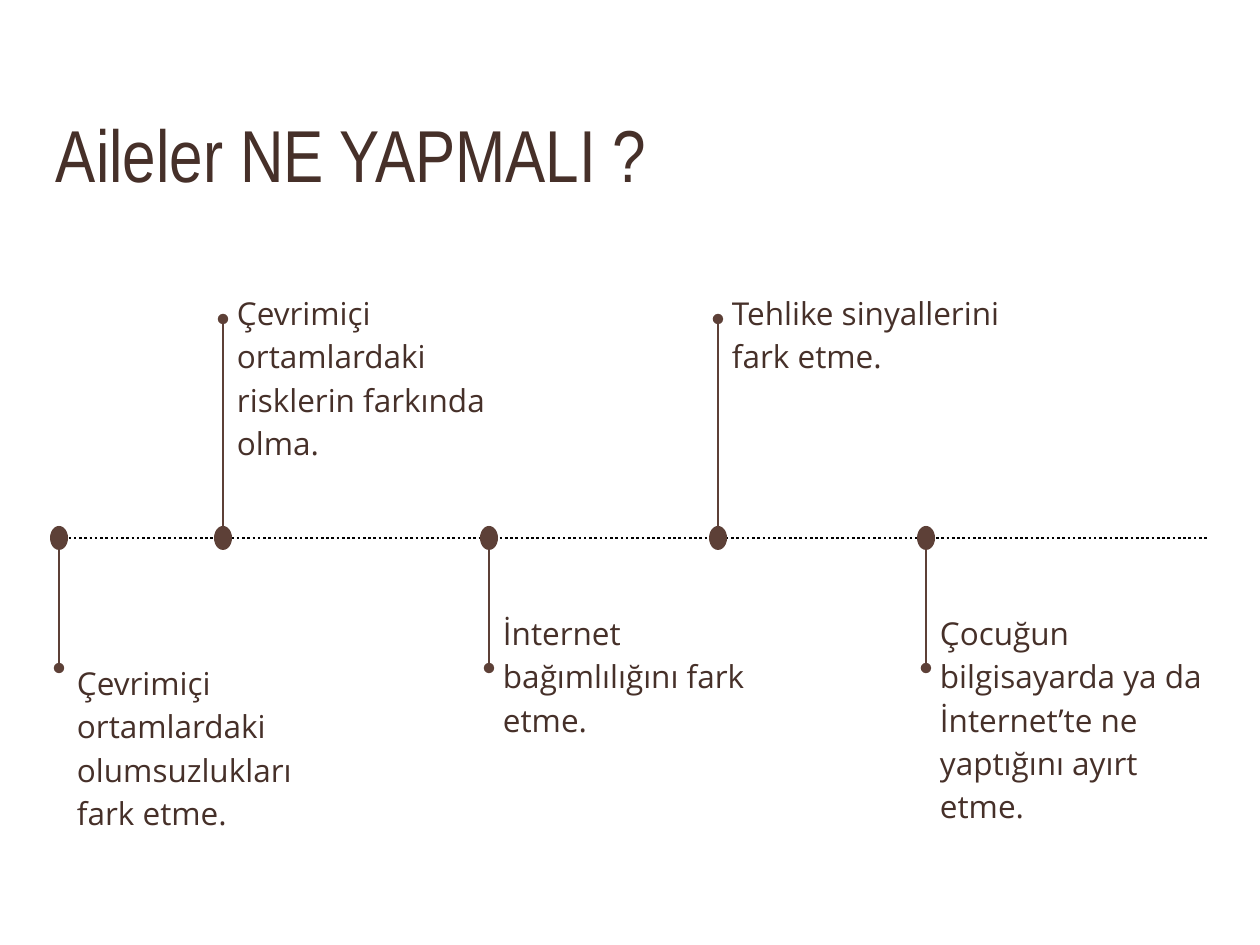
from dataclasses import dataclass

from lxml import etree
from pptx import Presentation
from pptx.dml.color import RGBColor
from pptx.enum.dml import MSO_LINE
from pptx.enum.shapes import MSO_CONNECTOR, MSO_SHAPE
from pptx.enum.text import MSO_ANCHOR
from pptx.oxml.ns import qn
from pptx.util import Emu, Pt

OVAL = MSO_SHAPE.OVAL
STRAIGHT = MSO_CONNECTOR.STRAIGHT
TOP, BOTTOM = MSO_ANCHOR.TOP, MSO_ANCHOR.BOTTOM
ROUND_DOT = MSO_LINE.ROUND_DOT

PX_PER_INCH = 126
INSET = 13
AXIS_Y = 538
DOT_WIDTH, DOT_HEIGHT = 18, 24
TEXT_WIDTH = 300

BROWN = "5D4037"
DARK_BROWN = "463029"
BLACK = "000000"


@dataclass(frozen=True)
class Side:
    stem_start: int
    stem_end: int
    text_top: int
    text_height: int


@dataclass(frozen=True)
class Milestone:
    x: int
    side: Side
    text: str
    text_gap: int = 1
    text_drop: int = 0


ABOVE = Side(527, 319, 275, 202)
BELOW = Side(549, 668, 595, 223)

MILESTONES = [
    Milestone(59, BELOW, "Çevrimiçi ortamlardaki olumsuzlukları fark etme.", 5, 50),
    Milestone(223, ABOVE, "Çevrimiçi ortamlardaki risklerin farkında olma."),
    Milestone(489, BELOW, "İnternet bağımlılığını fark etme."),
    Milestone(718, ABOVE, "Tehlike sinyallerini fark etme."),
    Milestone(926, BELOW, "Çocuğun bilgisayarda ya da İnternet’te ne yaptığını ayırt etme."),
]


def px(length: int) -> Emu:
    return Emu(round(length * 914400 / PX_PER_INCH))


def color(hex_code: str) -> RGBColor:
    return RGBColor.from_string(hex_code)


def add_line(shapes, start: tuple[int, int], end: tuple[int, int], hex_code: str, width: float):
    line = shapes.add_connector(STRAIGHT, *map(px, start + end))
    line.line.color.rgb = color(hex_code)
    line.line.width = Pt(width)
    etree.SubElement(line._element.spPr, qn("a:effectLst"))
    return line


def add_text(page, left: int, top: int, width: int, height: int, text: str, font: str,
             size: int, spacing: float = 1.0, anchor=TOP, drop: int = 0) -> None:
    """Add a wrapped text box; drop lowers the first line inside it."""
    box = page.shapes.add_textbox(px(left), px(top), px(width), px(height))
    frame = box.text_frame
    frame.word_wrap = True
    frame.vertical_anchor = anchor
    frame.margin_left = frame.margin_right = frame.margin_bottom = px(INSET)
    frame.margin_top = px(INSET + drop)
    para = frame.paragraphs[0]
    para.line_spacing = spacing
    span = para.add_run()
    span.text = text
    span.font.name = font
    span.font.size = Pt(size)
    span.font.color.rgb = color(DARK_BROWN)


def add_milestone(page, item: Milestone) -> None:
    side = item.side
    marker = page.shapes.add_group_shape().shapes
    dot = marker.add_shape(OVAL, px(item.x - DOT_WIDTH // 2), px(AXIS_Y - DOT_HEIGHT // 2),
                           px(DOT_WIDTH), px(DOT_HEIGHT))
    dot.shadow.inherit = False
    dot.fill.solid()
    dot.fill.fore_color.rgb = color(BROWN)
    dot.line.fill.background()

    stem = add_line(marker, (item.x, side.stem_start), (item.x, side.stem_end), BROWN, 0.75)
    etree.SubElement(stem.line._get_or_add_ln(), qn("a:tailEnd"), type="oval")

    add_text(page, item.x + item.text_gap, side.text_top, TEXT_WIDTH, side.text_height,
             item.text, "Open Sans", 18, spacing=1.15, drop=item.text_drop)


def main() -> None:
    deck = Presentation()
    deck.slide_width, deck.slide_height = px(1260), px(945)
    page = deck.slides.add_slide(deck.slide_layouts[6])

    axis = add_line(page.shapes, (58, AXIS_Y), (1207, AXIS_Y), BLACK, 1.5)
    axis.line.dash_style = ROUND_DOT
    add_text(page, 43, 58, 1174, 152, "Aileler NE YAPMALI ?", "Arial Narrow", 42, anchor=BOTTOM)
    for item in MILESTONES:
        add_milestone(page, item)

    deck.save("out.pptx")


if __name__ == "__main__":
    main()
